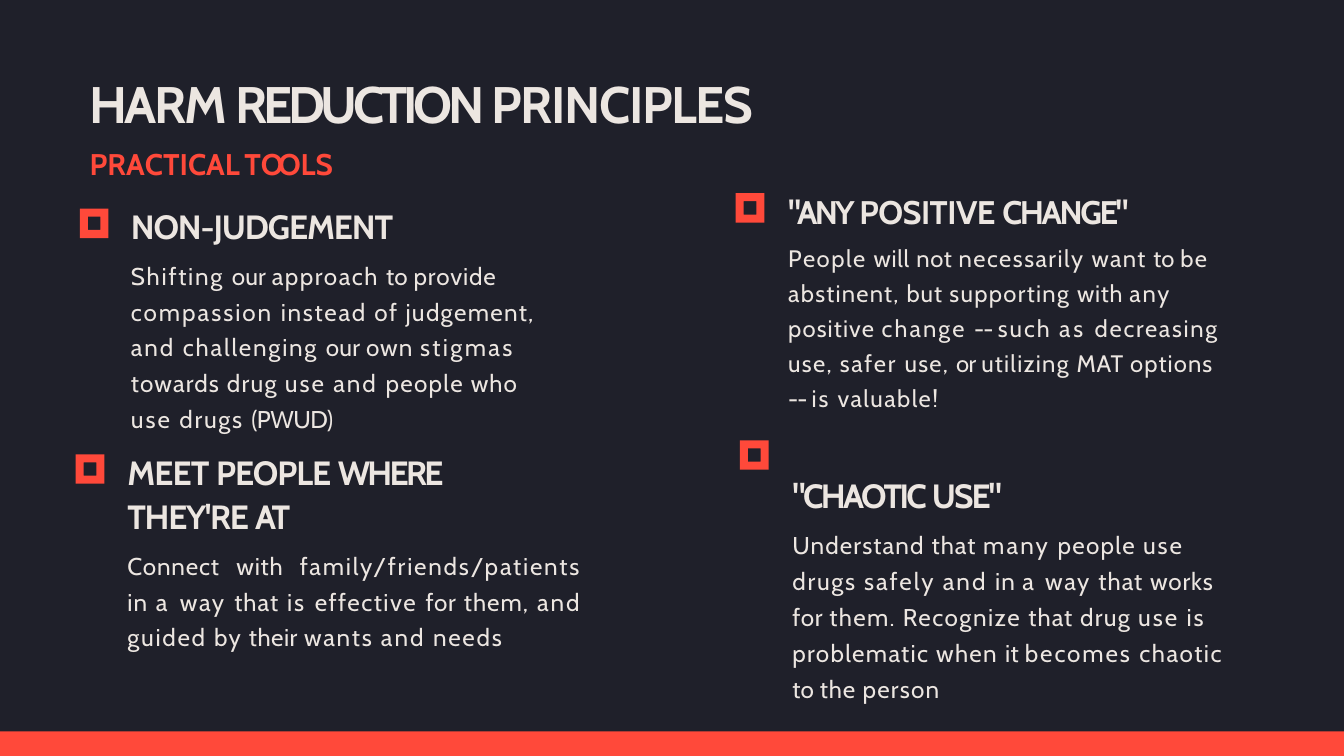
"""Build the harm reduction principles slide."""
from dataclasses import dataclass

from pptx import Presentation
from pptx import util as u
from pptx.dml.color import RGBColor
from pptx.enum import shapes, text

PX = 9525
WIDTH, HEIGHT = 1920, 1080
DARK = RGBColor(0x1F, 0x20, 0x2A)
CREAM = RGBColor(0xEC, 0xE6, 0xE1)
RED = RGBColor(0xFF, 0x49, 0x3A)
FONT = "Cabin"


@dataclass
class Block:
    runs: list[tuple[str, float]]
    size: float
    bold: bool = True
    color: RGBColor = CREAM
    indent: int = 1
    before: float = 0
    line: float = 1.0
    justified: bool = False


@dataclass
class TextArea:
    left: int
    top: int
    width: int
    height: int
    blocks: list[Block]


@dataclass
class Marker:
    left: int
    top: int
    width: int = 41
    height: int = 42


TITLE = TextArea(127, 103, 1116, 89, [
    Block([("HARM ", -2.7), ("REDUCTION ", -4.8), ("PRINCIPLES", -1.5)], 55),
])

LEFT_COLUMN = TextArea(127, 208, 704, 723, [
    Block([("P", -0.4), ("R", -1.3), ("A", -3.5), ("C", -3.8), ("T", -3.3), ("I", -1.4),
           ("C", -3.8), ("A", -3.5), ("L ", -2.4), ("T", -3.3), ("OO", -6), ("L", -2.5),
           ("S", 0.3)], 32, color=RED),
    Block([("NON-JUDGEMENT", -1.2)], 36, indent=60, before=25.9),
    Block([("Shifting ", 1.9), ("our ", 0.2), ("approach ", 1.6), ("to ", 0.2),
           ("provide\n", 0.9), ("compassion ", 2.1), ("instead ", 1.8), ("of ", 1.6),
           ("judgement,\n", 1.4), ("and ", 2.1), ("challenging ", 1.9), ("our ", 0.2),
           ("own ", 1.1), ("stigmas\n", 2.5), ("towards ", 1.2), ("drug ", 1.4),
           ("use and ", 2.1), ("people ", 1.4), ("who\n", 1), ("use ", 2.1),
           ("drugs ", 1.8), ("(PWUD)", -0.5)],
          26, bold=False, indent=60, before=9.1, line=1.23),
    Block([("MEET ", -0.9), ("PEOPLE ", -1.1), ("WHERE\n", -2.9), ("THEY'RE ", -1.4),
           ("AT", -2.9)], 36, indent=55, before=16.6, line=1.08),
    Block([("Connect ", 0.9), ("with ", 0.8), ("family/friends/patients ", 1.9), ("in ", 1.1),
           ("a ", 3), ("way ", 1.8), ("that ", 1.1), ("is ", 2.1), ("effective ", 1.6),
           ("for ", 0.7), ("them, ", 1.1), ("and ", 2.1), ("guided ", 1.8), ("by ", 1.4),
           ("their ", 0.5), ("wants ", 1.9), ("and ", 2.1), ("needs", 1.9)],
          26, bold=False, indent=55, before=9.1, line=1.23, justified=True),
])

RIGHT_COLUMN = TextArea(1125, 274, 652, 627, [
    Block([("\"ANY ", -2.9), ("POSITIVE ", -0.6), ("CHANGE\"", -2.6)], 35),
    Block([("People ", 1.6), ("will ", 0.8), ("not ", 0.7), ("necessarily ", 1.6),
           ("want ", 1.4), ("to ", 0.2), ("be\n", 1.5), ("abstinent, ", 1.3), ("but ", 1),
           ("supporting ", 1.4), ("with ", 0.8), ("any\n", 1.9), ("positive ", 1.2),
           ("change ", 2.2), ("-- ", -1.1), ("such ", 2.1), ("as ", 3.2),
           ("decreasing\n", 1.8), ("use, ", 1.4), ("safer ", 1.9), ("use, ", 1.4),
           ("or ", -0.5), ("utilizing ", 1.3), ("MAT ", 0.7), ("options\n", 1.2),
           ("-- ", -1.1), ("is ", 2), ("valuable!", 1.5)],
          25.5, bold=False, before=7, line=1.22),
    Block([("\"CHAOTIC ", -2.8), ("USE\"", -2.1)], 36, indent=7, before=68),
    Block([("Understand ", 1.2), ("that ", 1.1), ("many ", 2.2), ("people ", 1.4),
           ("use\n", 2.1), ("drugs ", 1.8), ("safely and ", 2.1), ("in ", 1.1), ("a ", 3),
           ("way ", 1.8), ("that ", 1.1), ("works\n", 0.9), ("for ", 0.7), ("them. ", 1.4),
           ("Recognize ", 1.6), ("that ", 1.1), ("drug ", 1.4), ("use is\n", 2.1),
           ("problematic when ", 1.4), ("it ", 0.3), ("becomes ", 2), ("chaotic\n", 1.6),
           ("to ", 0.2), ("the ", 0.9), ("person", 1.3)],
          26, bold=False, indent=7, before=9, line=1.23),
])

MARKERS = [Marker(114, 298), Marker(1051, 276), Marker(108, 649), Marker(1057, 629)]


def add_red_shape(slide, kind, left: int, top: int, width: int, height: int):
    """Add a flat red preset shape."""
    shape = slide.shapes.add_shape(kind, left * PX, top * PX, width * PX, height * PX)
    shape.shadow.inherit = False
    shape.fill.solid()
    shape.fill.fore_color.rgb = RED
    shape.line.fill.background()
    return shape


def add_marker(slide, marker: Marker) -> None:
    """Add a square frame that marks a principle."""
    shape = add_red_shape(slide, shapes.MSO_SHAPE.FRAME, marker.left, marker.top,
                          marker.width, marker.height)
    shape.adjustments[0] = 0.28


def fill_paragraph(paragraph, block: Block) -> None:
    """Format a paragraph and add its tracked runs."""
    paragraph.space_before = u.Pt(block.before)
    paragraph.line_spacing = block.line
    paragraph.alignment = text.PP_ALIGN.JUSTIFY if block.justified else text.PP_ALIGN.LEFT
    properties = paragraph._p.get_or_add_pPr()
    properties.set("marL", str(block.indent * PX))
    properties.set("indent", "0")
    for words, tracking in block.runs:
        run = paragraph.add_run()
        run.text = words.rstrip("\n")
        run.font.name = FONT
        run.font.size = u.Pt(block.size)
        run.font.bold = block.bold
        run.font.color.rgb = block.color
        run._r.get_or_add_rPr().set("spc", str(round(tracking * 100)))
        if words.endswith("\n"):
            paragraph.add_line_break()


def add_text_area(slide, area: TextArea) -> None:
    """Add a text box with one paragraph per block."""
    shape = slide.shapes.add_textbox(area.left * PX, area.top * PX,
                                     area.width * PX, area.height * PX)
    frame = shape.text_frame
    frame.word_wrap = True
    frame.margin_left = frame.margin_top = frame.margin_right = frame.margin_bottom = 0
    for index, block in enumerate(area.blocks):
        paragraph = frame.add_paragraph() if index else frame.paragraphs[0]
        fill_paragraph(paragraph, block)


def main() -> None:
    """Build and save the presentation."""
    presentation = Presentation()
    presentation.slide_width = WIDTH * PX
    presentation.slide_height = HEIGHT * PX
    slide = presentation.slides.add_slide(presentation.slide_layouts[6])
    slide.background.fill.solid()
    slide.background.fill.fore_color.rgb = DARK
    add_red_shape(slide, shapes.MSO_SHAPE.RECTANGLE, 0, 1045, WIDTH, HEIGHT - 1045)
    for marker in MARKERS:
        add_marker(slide, marker)
    for area in (TITLE, LEFT_COLUMN, RIGHT_COLUMN):
        add_text_area(slide, area)
    presentation.save("out.pptx")


if __name__ == "__main__":
    main()
